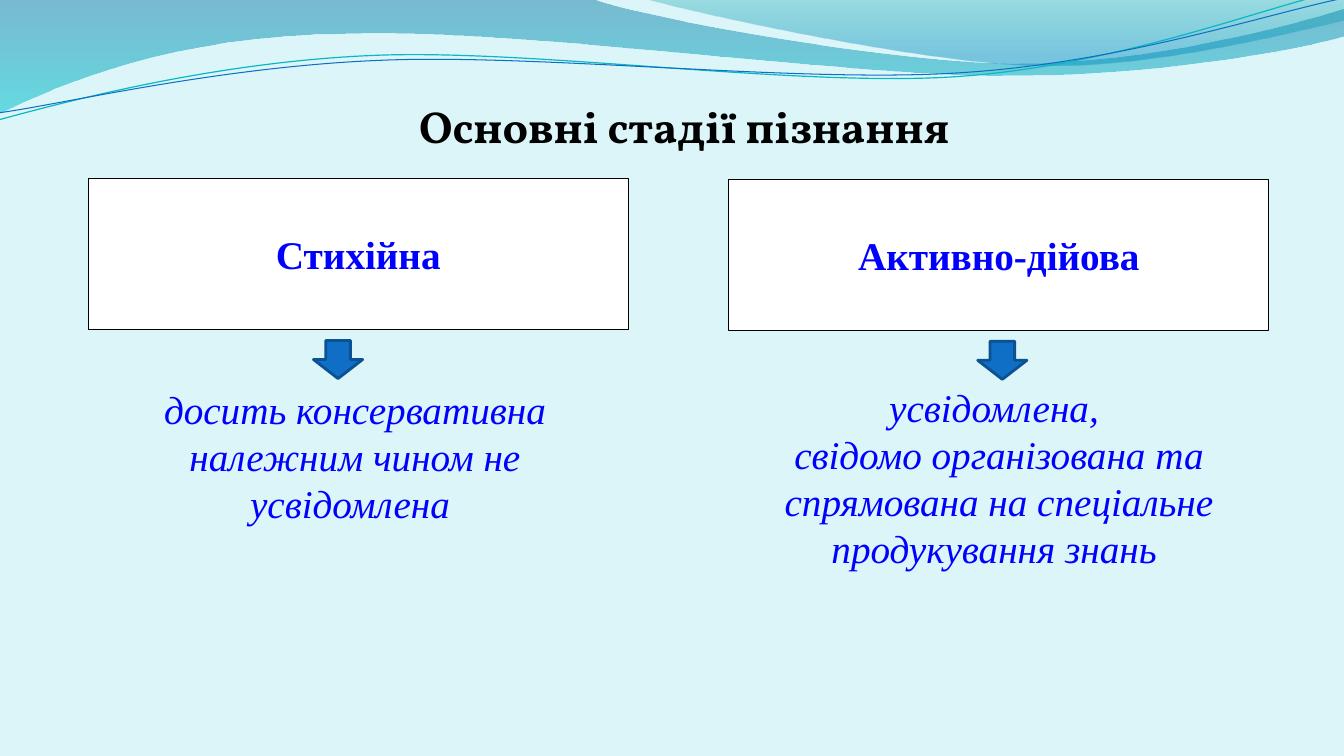
from dataclasses import dataclass

import pptx
import pptx.dml.color
import pptx.enum.shapes
import pptx.enum.text
import pptx.oxml
import pptx.oxml.ns
import pptx.util
from pptx.util import Cm


def rgb(value):
    return pptx.dml.color.RGBColor.from_string(value)


@dataclass(frozen=True)
class Theme:
    background: str = "DBF5F9"
    box: str = "FFFFFF"
    ink: str = "000000"
    accent: str = "0000FF"
    arrow: str = "0F6FC6"
    arrow_edge: str = "0B5292"
    title_font: str = "Vollkorn"
    body_font: str = "Times New Roman"
    title_size: int = 32
    body_size: int = 28
    back_wave: tuple = ((0, "0074A1", 45), (1, "00C6CF", 55))
    front_wave: tuple = ((0, "00A1A9", 30), (0.8, "008BBF", 45))
    teal_line: tuple = ("0AB8BF", 0.85)
    blue_line: tuple = ("0F6FC6", 0.75)


THEME = Theme()

BACK_WAVE = (
    [(0, -0.03)],
    [(14.91, -0.03)],
    [(16.1, 0.43), (22.48, 1.6), (25.68, 1.6)],
    [(28.91, 1.6), (32.46, 0.66), (33.86, 0.23)],
    [(33.91, 0.91)],
    [(33.3, 1.12), (29.46, 1.93), (25.25, 1.91)],
    [(21.06, 1.91), (12.93, 0.71), (8.71, 0.86)],
    [(4.37, 0.89), (1.55, 2.11), (-0.03, 2.87)],
    [(0, -0.03)],
)
FRONT_WAVE = (
    [(16.23, -0.03)],
    [(17.25, 0.28), (23.09, 1.57), (26.04, 1.65)],
    [(28.98, 1.75), (32.56, 0.81), (33.86, 0.53)],
    [(33.86, 0)],
    [(16.23, -0.03)],
)
TEAL_LINE = (
    [(-0.03, 3.02)],
    [(1.63, 2.57), (5.36, 1.57), (9.37, 1.4)],
    [(13.39, 1.22), (20.07, 2.21), (24.13, 1.93)],
    [(28.19, 1.65), (31.8, 0.2), (33.81, -0.25)],
)
BLUE_LINE = (
    [(0, 2.84)],
    [(1.6, 2.62), (5.54, 1.68), (9.6, 1.52)],
    [(13.64, 1.35), (20.22, 2.11), (24.26, 1.83)],
    [(28.32, 1.57), (31.88, 0.36), (33.88, -0.05)],
)


def bend(shape, segments):
    steps = iter(list(shape.element.spPr.iter(pptx.oxml.ns.qn("a:lnTo"))))
    for segment in segments:
        first, *others = [next(steps) for _ in segment]
        if others:
            curve = pptx.oxml.parse_xml(f'<a:cubicBezTo {pptx.oxml.ns.nsdecls("a")}/>')
            first.addprevious(curve)
            for step in (first, *others):
                curve.append(step[0])
                step.getparent().remove(step)


def add_outline(slide, left, top, outline, closed):
    start, *points = [(Cm(left + x), Cm(top + y)) for segment in outline for x, y in segment]
    builder = slide.shapes.build_freeform(*start)
    builder.add_line_segments(points, close=closed)
    shape = builder.convert_to_shape()
    shape.shadow.inherit = False
    bend(shape, outline[1:])
    return shape


def add_wave(slide, left, top, outline, stops):
    wave = add_outline(slide, left, top, outline, True)
    wave.line.fill.background()
    wave.fill.gradient()
    wave.fill.gradient_angle = 270
    for stop, (position, color, _) in zip(wave.fill.gradient_stops, stops):
        stop.position = position
        stop.color.rgb = rgb(color)
    colors = wave.element.spPr.iter(pptx.oxml.ns.qn("a:srgbClr"))
    for color, (_, _, opacity) in zip(colors, stops):
        alpha = pptx.oxml.parse_xml(f'<a:alpha {pptx.oxml.ns.nsdecls("a")} val="{opacity * 1000}"/>')
        color.append(alpha)


def add_decoration(slide, left, top):
    add_wave(slide, left, top, BACK_WAVE, THEME.back_wave)
    add_wave(slide, left, top, FRONT_WAVE, THEME.front_wave)
    for outline, (color, width) in ((TEAL_LINE, THEME.teal_line), (BLUE_LINE, THEME.blue_line)):
        ribbon = add_outline(slide, left, top, outline, False)
        ribbon.fill.background()
        ribbon.line.color.rgb = rgb(color)
        ribbon.line.width = pptx.util.Pt(width)


def write(shape, lines, font, size, color, bold=False, italic=False):
    frame = shape.text_frame
    frame.word_wrap = True
    frame.text = "\n".join(lines)
    for paragraph in frame.paragraphs:
        paragraph.alignment = pptx.enum.text.PP_ALIGN.CENTER
        paragraph.font.name = font
        paragraph.font.size = pptx.util.Pt(size)
        paragraph.font.color.rgb = rgb(color)
        paragraph.font.bold = bold
        paragraph.font.italic = italic


def add_title(slide, left, top, width, height):
    title = slide.shapes.add_textbox(Cm(left), Cm(top), Cm(width), Cm(height))
    write(title, ["Основні стадії пізнання"], THEME.title_font, THEME.title_size, THEME.ink, bold=True)


def add_block(slide, preset, box, fill, edge, edge_width):
    block = slide.shapes.add_shape(preset, *map(Cm, box))
    block.shadow.inherit = False
    block.fill.solid()
    block.fill.fore_color.rgb = rgb(fill)
    block.line.color.rgb = rgb(edge)
    block.line.width = pptx.util.Pt(edge_width)
    return block


def add_stage(slide, left, top, name, traits, arrow_dx, traits_dx, traits_dy):
    presets = pptx.enum.shapes.MSO_SHAPE
    heading = add_block(slide, presets.RECTANGLE, (left, top, 13.62, 3.8), THEME.box, THEME.ink, 0.75)
    heading.text_frame.vertical_anchor = pptx.enum.text.MSO_ANCHOR.MIDDLE
    write(heading, [name], THEME.body_font, THEME.body_size, THEME.accent, bold=True)
    description = slide.shapes.add_textbox(
        Cm(left + traits_dx), Cm(top + traits_dy), Cm(13.87), Cm(5.94)
    )
    write(description, traits, THEME.body_font, THEME.body_size, THEME.accent, italic=True)
    arrow_box = (left + arrow_dx, top + 4.08, 1.24, 0.96)
    add_block(slide, presets.DOWN_ARROW, arrow_box, THEME.arrow, THEME.arrow_edge, 2)


def main():
    deck = pptx.Presentation()
    deck.slide_width = Cm(33.87)
    deck.slide_height = Cm(19.05)
    slide = deck.slides.add_slide(deck.slide_layouts[6])
    slide.background.fill.solid()
    slide.background.fill.fore_color.rgb = rgb(THEME.background)
    add_decoration(slide, 0, 0)
    add_title(slide, 2.95, 2.36, 28.6, 1.6)
    add_stage(
        slide, 2.22, 4.5, "Стихійна",
        ["досить консервативна належним чином не усвідомлена "],
        arrow_dx=5.68, traits_dx=-0.21, traits_dy=5.08,
    )
    add_stage(
        slide, 18.36, 4.52, "Активно-дійова",
        ["усвідомлена, ", "свідомо організована та спрямована на спеціальне продукування знань "],
        arrow_dx=6.28, traits_dx=-0.12, traits_dy=5.01,
    )
    deck.save("out.pptx")


if __name__ == "__main__":
    main()
